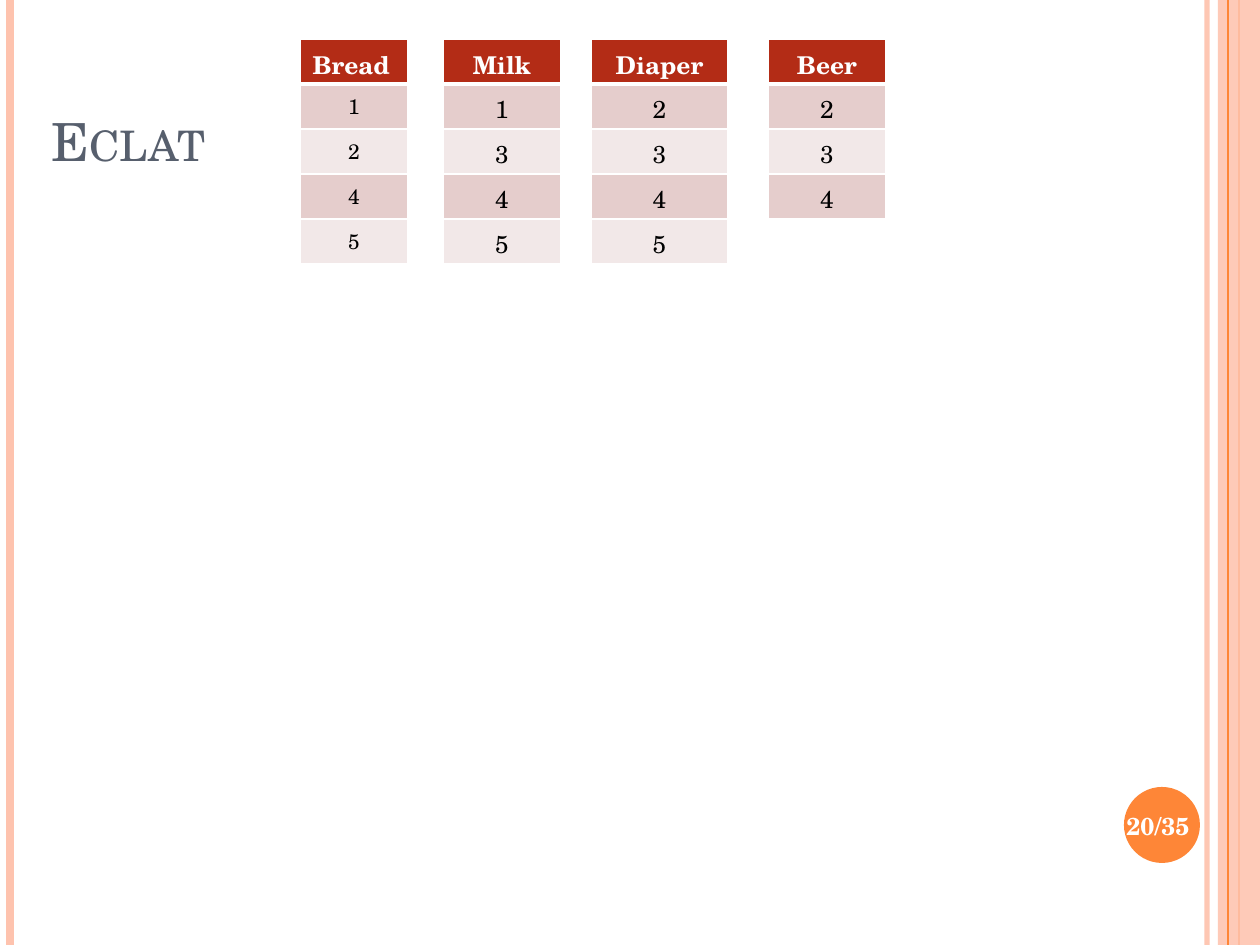
from lxml.etree import SubElement as Sub
from pptx import Presentation
from pptx.dml.color import RGBColor as RGB
from pptx.enum.shapes import MSO_CONNECTOR as Conn, MSO_SHAPE as Kind
from pptx.enum.text import MSO_ANCHOR as Anchor, PP_ALIGN as Align
from pptx.oxml.ns import qn
from pptx.util import Emu, Pt

SCALE = 914400 / 126
WIDE, HIGH = 1260, 945
ROW, TOP = 45, 39
FONT = "TeX Gyre Schola"
WHITE = RGB(0xFF, 0xFF, 0xFF)
BLACK = RGB(0, 0, 0)
SLATE = RGB(0x57, 0x5F, 0x6D)
PEACH = RGB(0xFE, 0xC3, 0xAE)
ORANGE = RGB(0xFE, 0x86, 0x37)
RED = RGB(0xB3, 0x2C, 0x16)
ROSE = RGB(0xE5, 0xCD, 0xCC)
PALE = RGB(0xF2, 0xE8, 0xE8)
ITEMS = [
    ("Bread", "1245", 300, 108, 12, Align.LEFT),
    ("Milk", "1345", 443, 118, 14, Align.CENTER),
    ("Diaper", "2345", 591, 137, 14, Align.CENTER),
    ("Beer", "234", 768, 118, 14, Align.CENTER),
]


def px(num):
    """Turn pixels into EMU."""
    return Emu(round(num * SCALE))


def fade(part, alpha):
    """Set the opacity, in percent, of a solid fill inside part."""
    tint = next(part.iter(qn("a:srgbClr")))
    Sub(tint, qn("a:alpha")).set("val", str(alpha * 1000))


def add_rule(slide, x, color, width, alpha=100):
    """Draw an upright rule over the full height of the slide."""
    rule = slide.shapes.add_connector(Conn.STRAIGHT, px(x), 0, px(x), px(HIGH))
    rule.line.color.rgb = color
    rule.line.width = Pt(width)
    if alpha < 100:
        fade(rule.line._ln, alpha)
    Sub(rule._element.spPr, qn("a:effectLst"))


def add_form(slide, kind, box, color, alpha=100):
    """Add a plain filled shape without outline."""
    form = slide.shapes.add_shape(kind, *map(px, box))
    form.shadow.inherit = False
    form.fill.solid()
    form.fill.fore_color.rgb = color
    form.line.fill.background()
    if alpha < 100:
        fade(form._element.spPr, alpha)


def add_run(frame, text, size, color, bold=False, align=Align.LEFT):
    """Write one run into the first paragraph of a frame."""
    para = frame.paragraphs[0]
    para.alignment = align
    run = para.add_run()
    run.text = text
    font = run.font
    font.name, font.size, font.bold = FONT, Pt(size), bold
    font.color.rgb = color
    return run


def add_box(slide, box, anchor):
    """Add a wrapping text box and return its frame."""
    frame = slide.shapes.add_textbox(*map(px, box)).text_frame
    frame.word_wrap = True
    frame.vertical_anchor = anchor
    return frame


def paint(cell, color, base):
    """Give a cell its fill and white borders, with its own base width."""
    props = cell._tc.get_or_add_tcPr()
    for side, width in (("L", 1), ("R", 1), ("T", 1), ("B", base)):
        edge = Sub(props, qn(f"a:ln{side}"), w=str(Pt(width)))
        fill = Sub(edge, qn("a:solidFill"))
        Sub(fill, qn("a:srgbClr"), val=str(WHITE))
    cell.fill.solid()
    cell.fill.fore_color.rgb = color


def add_list(slide, name, ids, left, width, size, align):
    """Add a one-column table of the transactions that hold an item."""
    count = len(ids) + 1
    box = map(px, (left, TOP, width, ROW * count))
    table = slide.shapes.add_table(count, 1, *box).table
    head = table.cell(0, 0)
    paint(head, RED, 3)
    add_run(head.text_frame, name, 14, WHITE, True, align)
    for row, mark in enumerate(ids, 1):
        cell = table.cell(row, 0)
        paint(cell, ROSE if row % 2 else PALE, 3 if row == 0 else 1)
        add_run(cell.text_frame, mark, size, BLACK, align=Align.CENTER)
    for row in range(1, count):
        edge = table.cell(row, 0)._tc.tcPr.find(qn("a:lnT"))
        edge.set("w", str(Pt(3 if row == 1 else 1)))


def main():
    """Build the slide and save it."""
    deck = Presentation()
    deck.slide_width, deck.slide_height = px(WIDE), px(HIGH)
    slide = deck.slides.add_slide(deck.slide_layouts[6])
    add_rule(slide, 1207, PEACH, 3, 93)
    add_rule(slide, 10, PEACH, 4.5)
    add_rule(slide, 1239, ORANGE, 1.5)
    add_form(slide, Kind.RECTANGLE, (1218, 0, 42, HIGH), PEACH, 87)
    add_rule(slide, 1228, ORANGE, 0.75)
    add_form(slide, Kind.OVAL, (1124, 787, 76, 76), ORANGE)
    title = add_box(slide, (39, 20, 1029, 158), Anchor.BOTTOM)
    run = add_run(title, "Eclat", 30, SLATE)
    run.font._element.set("cap", "small")
    page = add_box(slide, (1112, 790, 92, 72), Anchor.MIDDLE)
    page.margin_left = page.margin_right = 0
    add_run(page, "20/35", 14, WHITE, True, Align.CENTER)
    for item in ITEMS:
        add_list(slide, *item)
    deck.save("out.pptx")


if __name__ == "__main__":
    main()
